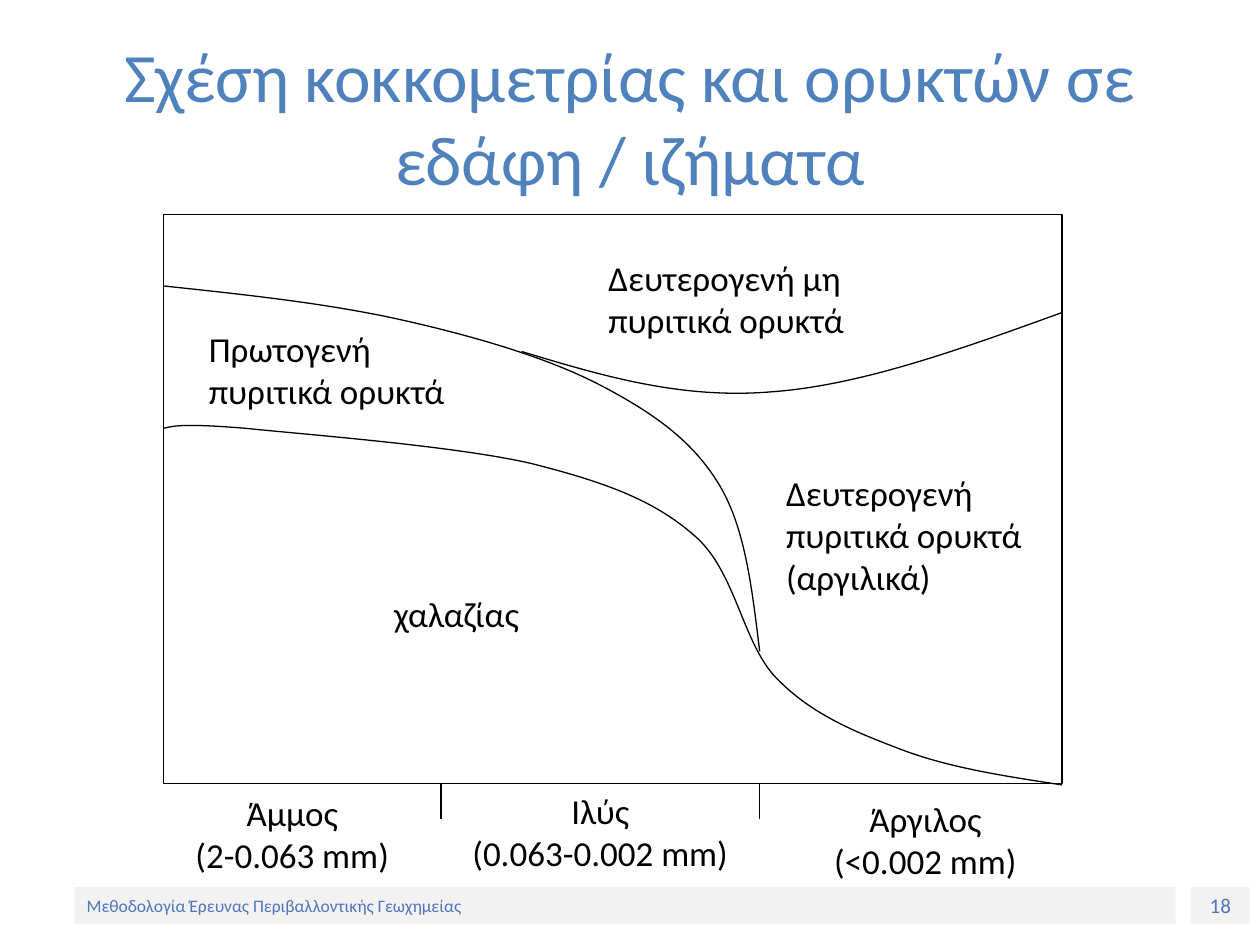
from lxml import etree
from pptx import Presentation
from pptx.dml.color import RGBColor
from pptx.enum.shapes import MSO_CONNECTOR, MSO_SHAPE
from pptx.enum.text import MSO_ANCHOR, MSO_AUTO_SIZE, PP_ALIGN
from pptx.oxml.ns import qn
from pptx.util import Pt

PX = 9144  # EMU in one px, 100 px to the inch
FONT = "Calibri"
BLACK = RGBColor(0, 0, 0)
WHITE = RGBColor(255, 255, 255)
GREY = RGBColor(0xF2, 0xF2, 0xF2)
BLUE = RGBColor(0x4F, 0x81, 0xBD)
NAVY = RGBColor(0x50, 0x75, 0xBC)
LEFT, CENTER = PP_ALIGN.LEFT, PP_ALIGN.CENTER
MIDDLE = MSO_ANCHOR.MIDDLE
RECT = MSO_SHAPE.RECTANGLE
STRAIGHT = MSO_CONNECTOR.STRAIGHT

TITLE = "Σχέση κοκκομετρίας και ορυκτών σε εδάφη / ιζήματα"
FOOTER = "Μεθοδολογία Έρευνας Περιβαλλοντικής Γεωχημείας"

# Each curve: a start point, then three Bézier points for every arc.
QUARTZ = [(0, 170),
          (8, 168), (16, 166), (65, 170),
          (113, 175), (232, 184), (292, 198),
          (351, 213), (389, 227), (421, 255),
          (454, 283), (459, 340), (486, 368),
          (513, 396), (546, 410), (583, 424),
          (621, 439), (667, 446), (713, 453)]
PRIMARY = [(0, 57),
           (66, 64), (131, 71), (189, 84),
           (247, 97), (305, 114), (347, 136),
           (389, 158), (420, 180), (441, 215),
           (462, 250), (467, 299), (473, 347)]
CLAY = [(713, 78),
        (633, 107), (553, 136), (482, 141),
        (410, 147), (347, 128), (284, 109)]

FIELDS = [
    ((173, 295, 126, 56), ["χαλαζίας"]),
    ((26, 85, 220, 80), ["Πρωτογενή", "πυριτικά ορυκτά"]),
    ((484, 199, 220, 113), ["Δευτερογενή", "πυριτικά ορυκτά (αργιλικά)"]),
    ((343, 29, 224, 78), ["Δευτερογενή μη", "πυριτικά ορυκτά"]),
]
SIZES = [
    ((-16, 453, 236, 86), ["Άμμος", "(2-0.063 mm)"]),
    ((193, 452, 307, 78), ["Ιλύς", "(0.063-0.002 mm)"]),
    ((504, 458, 201, 81), ["Άργιλος", "(<0.002 mm)"]),
]
TICKS = [220, 473]


def emu(*nums):
    return [n * PX for n in nums]


def write(frame, lines, size, color, align):
    frame.word_wrap = True
    for i, line in enumerate(lines):
        para = frame.paragraphs[0] if i == 0 else frame.add_paragraph()
        para.alignment = align
        run = para.add_run()
        run.text = line
        run.font.name = FONT
        run.font.size = Pt(size)
        run.font.color.rgb = color


def ink(shape):
    shape.line.color.rgb = BLACK
    shape.line.width = Pt(0.75)


def panel(slide, box, fill):
    shape = slide.shapes.add_shape(RECT, *emu(*box))
    shape.shadow.inherit = False
    shape.fill.solid()
    shape.fill.fore_color.rgb = fill
    shape.line.fill.background()
    return shape


def curve(slide, x, y, points):
    """Draw the points as cubic arcs: every three line steps become one."""
    (sx, sy), *rest = [(x + px, y + py) for px, py in points]
    form = slide.shapes.build_freeform(sx, sy, scale=PX)
    form.add_line_segments(rest, close=False)
    shape = form.convert_to_shape()
    shape.shadow.inherit = False
    shape.fill.background()
    ink(shape)
    steps = list(shape.element.iter(qn("a:lnTo")))
    for i in range(0, len(steps), 3):
        first, *others = steps[i:i + 3]
        arc = etree.SubElement(first.getparent(), qn("a:cubicBezTo"))
        for step in [first, *others]:
            arc.append(step[0])
            step.getparent().remove(step)


def tick(slide, x, y, length):
    line = slide.shapes.add_connector(STRAIGHT, *emu(x, y, x, y + length))
    ink(line)
    etree.SubElement(line.element.spPr, qn("a:effectLst"))


def label(slide, box, lines, align):
    text = slide.shapes.add_textbox(*emu(*box))
    write(text.text_frame, lines, 20, BLACK, align)


def diagram(slide, box):
    x, y, _, high = box
    ink(panel(slide, box, WHITE))
    for place in TICKS:
        tick(slide, x + place, y + high, 28)
    for points in (QUARTZ, PRIMARY, CLAY):
        curve(slide, x, y, points)
    for group, align in ((SIZES, CENTER), (FIELDS, LEFT)):
        for (dx, dy, w, h), lines in group:
            label(slide, (x + dx, y + dy, w, h), lines, align)


def heading(slide, box):
    title = slide.shapes.title
    title.left, title.top, title.width, title.height = emu(*box)
    frame = title.text_frame
    frame.auto_size = MSO_AUTO_SIZE.NONE
    frame.vertical_anchor = MIDDLE
    write(frame, [TITLE], 39.6, BLUE, CENTER)


def footer(slide, box):
    x, y, wide, high = box
    parts = [((x + wide - 47, y, 47, high), "18", 12, CENTER),
             ((x, y, wide - 59, high), FOOTER, 10, LEFT)]
    for place, text, size, align in parts:
        frame = panel(slide, place, GREY).text_frame
        frame.vertical_anchor = MIDDLE
        write(frame, [text], size, NAVY, align)


def main():
    deck = Presentation()
    deck.slide_width, deck.slide_height = emu(1000, 750)
    slide = deck.slides.add_slide(deck.slide_layouts.get_by_name("Title Only"))
    footer(slide, (59, 704, 933, 29))
    heading(slide, (50, 30, 900, 125))
    diagram(slide, (130, 170, 713, 452))
    deck.save("out.pptx")


if __name__ == "__main__":
    main()
